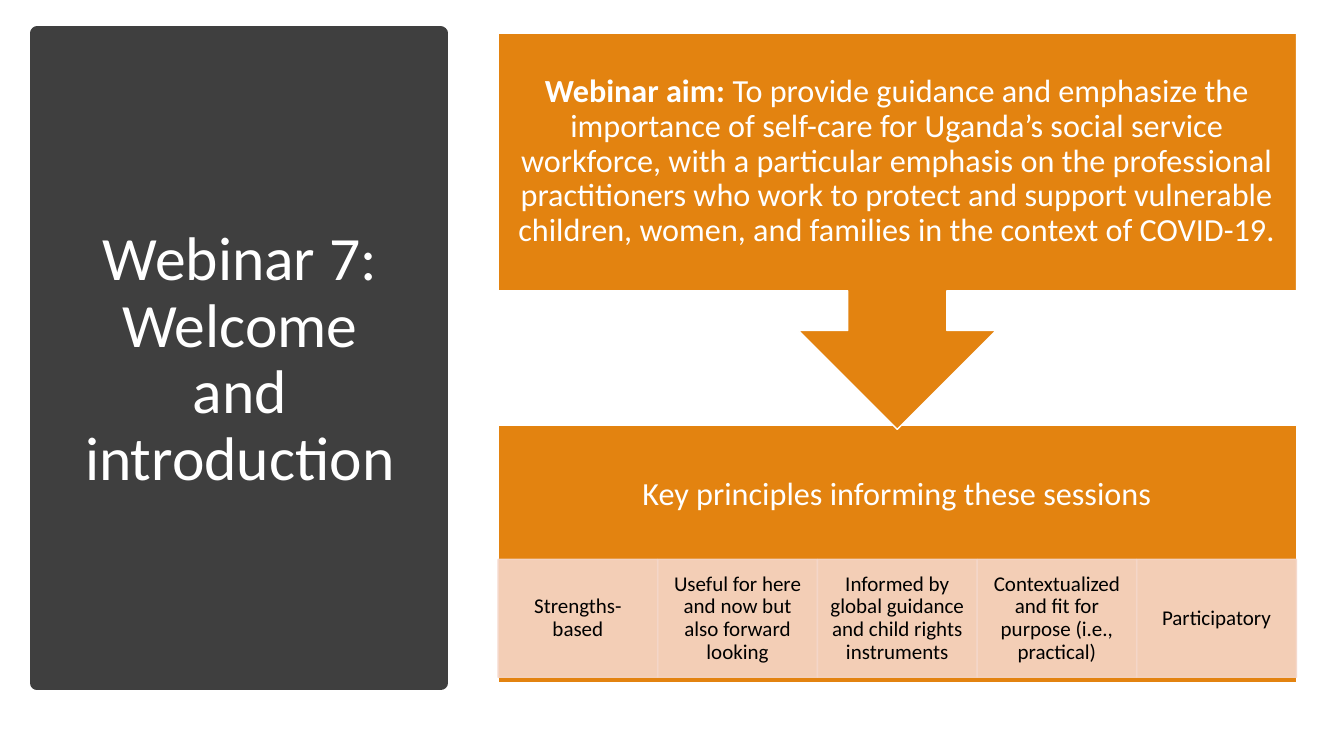
"""Build the welcome slide of a webinar on self-care."""
import dataclasses

import pptx
import pptx.dml.color
import pptx.enum.shapes
import pptx.enum.text
import pptx.oxml.ns
import pptx.oxml.xmlchemy
import pptx.util

RGB = pptx.dml.color.RGBColor
KIND = pptx.enum.shapes.MSO_SHAPE
WHITE = RGB(0xFF, 0xFF, 0xFF)
BLACK = RGB(0x00, 0x00, 0x00)
GREY = RGB(0x3F, 0x3F, 0x3F)
ORANGE = RGB(0xE3, 0x83, 0x10)
PEACH = RGB(0xF5, 0xD7, 0xC9)

WIDE = pptx.util.Inches(13.33)
HIGH = pptx.util.Inches(7.5)


@dataclasses.dataclass(frozen=True)
class Box:
    """A place on the slide, in percent of its width and height."""
    x: float
    y: float
    w: float
    h: float

    def place(self) -> tuple[int, int, int, int]:
        """Return left, top, width and height in EMU."""
        return (int(WIDE * self.x / 100), int(HIGH * self.y / 100),
                int(WIDE * self.w / 100), int(HIGH * self.h / 100))


@dataclasses.dataclass(frozen=True)
class Style:
    """Size, colour and insets of a text."""
    size: float
    color: RGB
    side: float
    top: float


@dataclasses.dataclass(frozen=True)
class Look:
    """Fill, line and opacity of a shape."""
    fill: RGB
    line: RGB
    width: float = 1
    alpha: int = 100


TITLE = Style(44, WHITE, 0.1, 0.05)
LEAD = Style(23, WHITE, 0.18, 0.18)
SMALL = Style(15, BLACK, 0.12, 0.02)
SOLID = Look(ORANGE, WHITE)
TINT = Look(PEACH, PEACH, alpha=90)

LEFT, SPAN = 37.06, 59.4
PANEL = Box(2.78, 4.4, 30, 86)
HEADING = Box(4.88, 9.33, 25.95, 76.67)
BASE = Box(LEFT, 56.27, SPAN, 34)
HEADER = Box(LEFT, 56.27, SPAN, 18.4)
CALLOUT = Box(LEFT, 4.4, SPAN, 52.4)
AIM = Box(LEFT, 4.4, SPAN, 34)
ROW, TALL = 74, 15.6

TOPICS = (
    "Strengths-based",
    "Useful for here and now but also forward looking",
    "Informed by global guidance and child rights instruments",
    "Contextualized and fit for purpose (i.e., practical)",
    "Participatory",
)
GOAL = (
    "To provide guidance and emphasize the importance of self-care for "
    "Uganda’s social service workforce, with a particular emphasis on the "
    "professional practitioners who work to protect and support vulnerable "
    "children, women, and families in the context of COVID-19."
)


def write(shape, text: str, style: Style, lead: str = "") -> None:
    """Write centred text, after an optional bold lead, into a shape."""
    frame = shape.text_frame
    frame.word_wrap = True
    frame.auto_size = pptx.enum.text.MSO_AUTO_SIZE.NONE
    frame.vertical_anchor = pptx.enum.text.MSO_ANCHOR.MIDDLE
    frame.margin_left = frame.margin_right = pptx.util.Inches(style.side)
    frame.margin_top = frame.margin_bottom = pptx.util.Inches(style.top)
    para = frame.paragraphs[0]
    para.alignment = pptx.enum.text.PP_ALIGN.CENTER
    para.line_spacing = 0.9
    para.font.name = "Calibri"
    para.font.size = pptx.util.Pt(style.size)
    para.font.color.rgb = style.color
    if lead:
        bold = para.add_run()
        bold.text = lead
        bold.font.bold = True
    para.add_run().text = text


def draw(slide, kind: KIND, box: Box, look: Look):
    """Draw a preset shape and return it."""
    shape = slide.shapes.add_shape(kind, *box.place())
    shape.shadow.inherit = False
    shape.fill.solid()
    shape.fill.fore_color.rgb = look.fill
    shape.line.color.rgb = look.line
    shape.line.width = pptx.util.Pt(look.width)
    if look.alpha < 100:
        for color in shape._element.spPr.iter(pptx.oxml.ns.qn("a:srgbClr")):
            alpha = pptx.oxml.xmlchemy.OxmlElement("a:alpha")
            alpha.set("val", str(look.alpha * 1000))
            color.append(alpha)
    return shape


def label(slide, box: Box, text: str, lead: str = "") -> None:
    """Add a text box in the lead style."""
    write(slide.shapes.add_textbox(*box.place()), text, LEAD, lead)


def main() -> None:
    """Build and save the slide."""
    deck = pptx.Presentation()
    deck.slide_width, deck.slide_height = WIDE, HIGH
    slide = deck.slides.add_slide(deck.slide_layouts[5])

    panel = draw(slide, KIND.RECTANGLE, PANEL, Look(GREY, GREY, 10))
    title = slide.shapes.title
    title.left, title.top, title.width, title.height = HEADING.place()
    write(title, "Webinar 7: Welcome and introduction", TITLE)
    panel._element.addnext(title._element)

    draw(slide, KIND.RECTANGLE, BASE, SOLID)
    label(slide, HEADER, "Key principles informing these sessions")
    step = SPAN / len(TOPICS)
    for col, topic in enumerate(TOPICS):
        tile = Box(LEFT + col * step, ROW, step, TALL)
        write(draw(slide, KIND.RECTANGLE, tile, TINT), topic, SMALL)

    arrow = draw(slide, KIND.UP_ARROW_CALLOUT, CALLOUT, SOLID)
    arrow.rotation = 180
    for spot, share in enumerate((0.25, 0.25, 0.25, 0.65)):
        arrow.adjustments[spot] = share
    label(slide, AIM, GOAL, "Webinar aim: ")

    deck.save("out.pptx")


if __name__ == "__main__":
    main()
